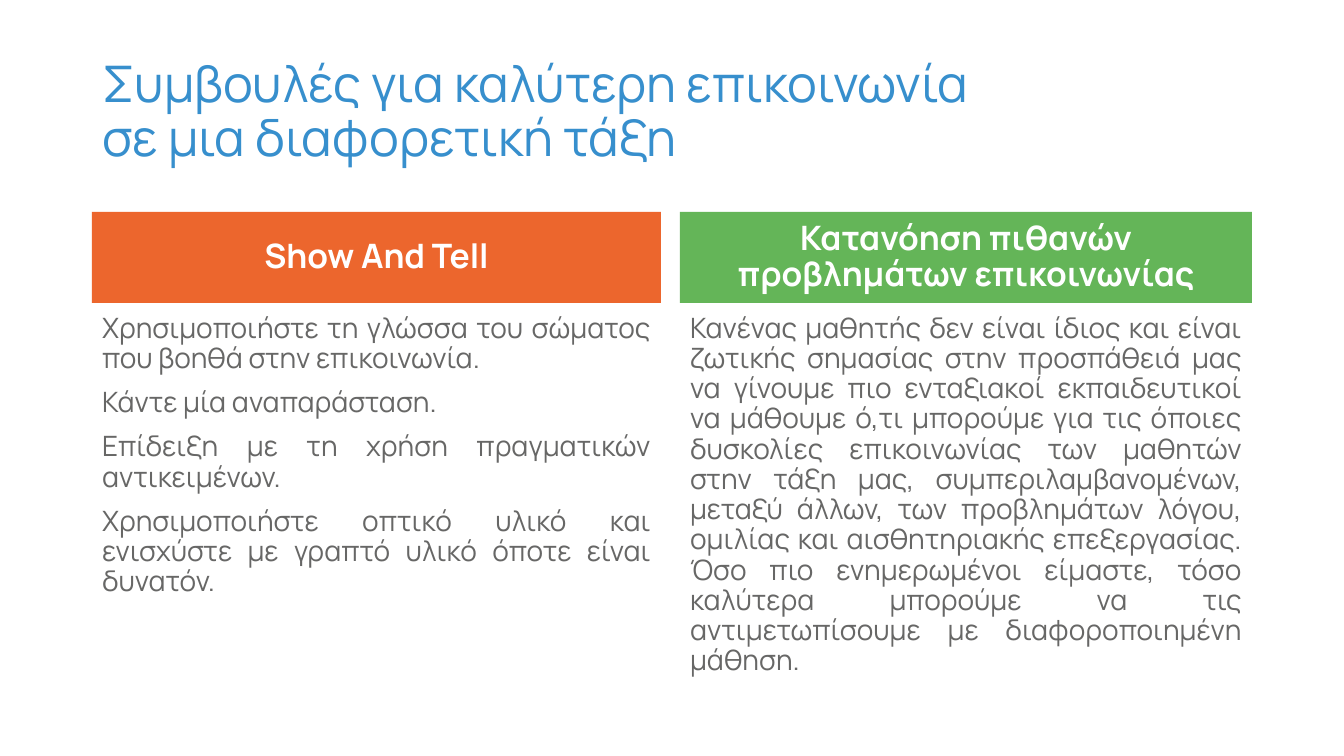
from lxml import etree
from pptx import Presentation, util as u
from pptx.dml.color import RGBColor
from pptx.enum import text
from pptx.oxml.ns import qn

PX = 914400 / 100.8


def hue(code):
    return RGBColor.from_string(code)


def write(box, lines, place, size, color, align, anchor, bold=False, gap=0, fill=None):
    box.left, box.top, box.width, box.height = [round(n * PX) for n in place]
    if fill:
        box.fill.solid()
        box.fill.fore_color.rgb = hue(fill)
    frame = box.text_frame
    frame.word_wrap = True
    frame.auto_size = text.MSO_AUTO_SIZE.NONE
    frame.vertical_anchor = anchor
    for i, line in enumerate(lines):
        par = frame.paragraphs[0] if i == 0 else frame.add_paragraph()
        par.text = line
        par.alignment = align
        par.line_spacing = 0.9
        par.space_before = u.Pt(gap if i else 0)
        props = par._p.get_or_add_pPr()
        props.set("marL", "0")
        props.set("indent", "0")
        etree.SubElement(props, qn("a:buNone"))
        for run in par.runs:
            run.font.name = "Manrope"
            run.font.size = u.Pt(size)
            run.font.bold = bold
            run.font.color.rgb = hue(color)
        for br in par._p.findall(qn("a:br")):
            etree.SubElement(br, qn("a:rPr"), sz=str(size * 100))


deck = Presentation()
deck.slide_width = round(1344 * PX)
deck.slide_height = round(756 * PX)
slide = deck.slides.add_slide(deck.slide_layouts.get_by_name("Comparison"))
slots = slide.placeholders
AL, AN = text.PP_ALIGN, text.MSO_ANCHOR

write(slide.shapes.title,
      ["Συμβουλές για καλύτερη επικοινωνία \vσε μια διαφορετική τάξη"],
      (92, 40, 943, 146), size=36, color="378FCD", align=AL.LEFT, anchor=AN.MIDDLE)

columns = [
    (92, 569, "EC662D", "Show And Tell", [
        "Χρησιμοποιήστε τη γλώσσα του σώματος που βοηθά στην επικοινωνία.",
        "Κάντε μία αναπαράσταση.",
        "Επίδειξη με τη χρήση πραγματικών αντικειμένων.",
        "Χρησιμοποιήστε οπτικό υλικό και ενισχύστε με γραπτό υλικό όποτε είναι δυνατόν.",
    ]),
    (680, 572, "64B558", "Κατανόηση πιθανών προβλημάτων επικοινωνίας", [
        "Κανένας μαθητής δεν είναι ίδιος και είναι ζωτικής σημασίας στην προσπάθειά μας "
        "να γίνουμε πιο ενταξιακοί εκπαιδευτικοί να μάθουμε ό,τι μπορούμε για τις όποιες "
        "δυσκολίες επικοινωνίας των μαθητών στην τάξη μας, συμπεριλαμβανομένων, μεταξύ "
        "άλλων, των προβλημάτων λόγου, ομιλίας και αισθητηριακής επεξεργασίας. Όσο πιο "
        "ενημερωμένοι είμαστε, τόσο καλύτερα μπορούμε να τις αντιμετωπίσουμε με "
        "διαφοροποιημένη μάθηση.",
    ]),
]

for i, (left, width, fill, head, tips) in enumerate(columns):
    write(slots[1 + 2 * i], [head], (left, 212, width, 91), size=24, color="FFFFFF",
          align=AL.CENTER, anchor=AN.MIDDLE, bold=True, fill=fill)
    write(slots[2 + 2 * i], tips, (left, 309, width, 406), size=20, color="676766",
          align=AL.JUSTIFY, anchor=AN.TOP, gap=10)

for slot in list(slots):
    if not slot.text_frame.text:
        slot.element.getparent().remove(slot.element)

deck.save("out.pptx")
